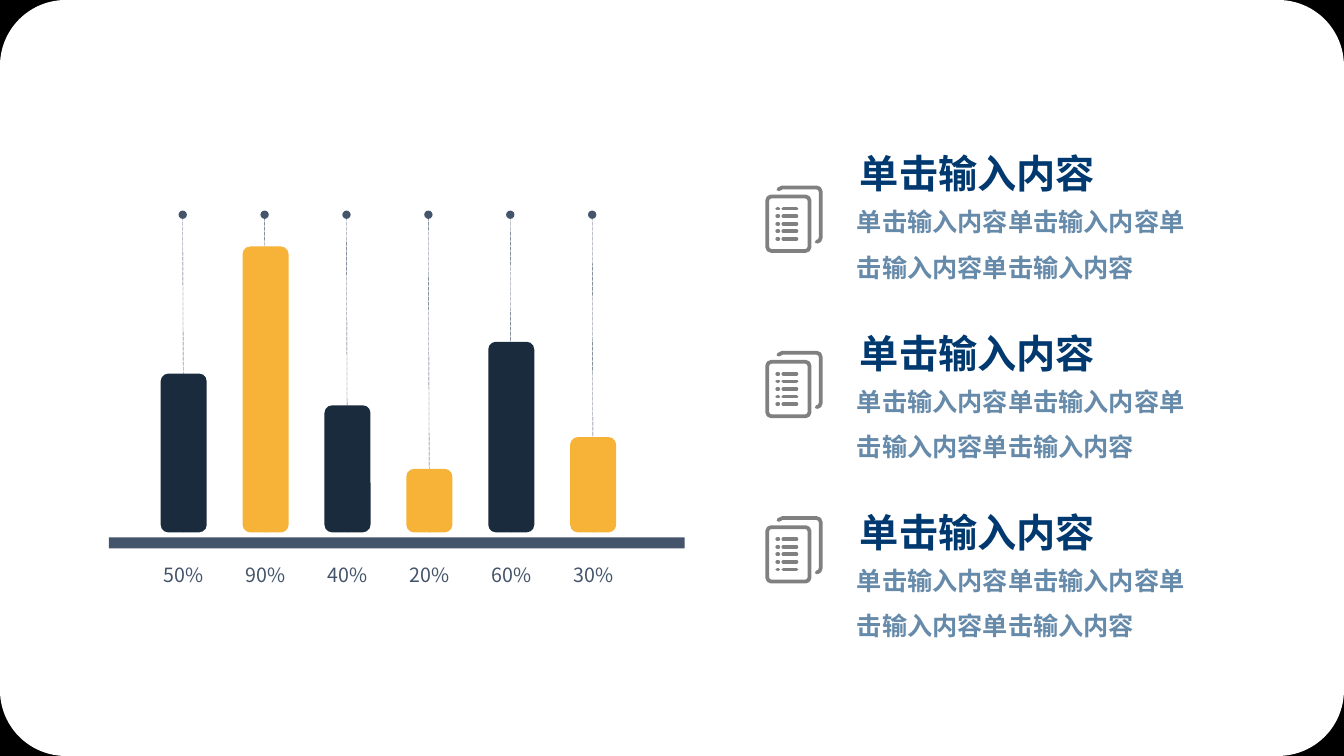
from math import cos, radians, sin

from lxml.etree import SubElement
from pptx import Presentation
from pptx.dml.color import RGBColor
from pptx.enum.dml import MSO_LINE_DASH_STYLE as DASH
from pptx.enum.shapes import MSO_CONNECTOR, MSO_SHAPE
from pptx.enum.text import MSO_AUTO_SIZE, PP_ALIGN
from pptx.oxml.ns import qn
from pptx.util import Inches, Pt

FONT = "Noto Sans CJK SC"
SLATE, NAVY, AMBER = "44546A", "192B3C", "F6B337"
HEAD, BODY, GREY = "00396F", "668AAA", "808080"
PERCENTS = [50, 90, 40, 20, 60, 30]
PHRASE = "单击输入内容"


def color(hex_text):
    return RGBColor.from_string(hex_text)


def add_box(s, kind, x, y, w, h, fill):
    sp = s.shapes.add_shape(kind, Inches(x), Inches(y), Inches(w), Inches(h))
    sp.shadow.inherit = False
    sp.fill.solid()
    sp.fill.fore_color.rgb = color(fill)
    sp.line.fill.background()
    return sp


def add_text(s, x, y, w, h, text, size, ink, spacing,
             bold=False, align=PP_ALIGN.LEFT, wrap=True):
    tf = s.shapes.add_textbox(Inches(x), Inches(y), Inches(w), Inches(h)).text_frame
    tf.word_wrap = wrap
    tf.auto_size = MSO_AUTO_SIZE.SHAPE_TO_FIT_TEXT
    p = tf.paragraphs[0]
    p.alignment, p.line_spacing = align, spacing
    r = p.add_run()
    r.text = text
    r.font.size, r.font.bold, r.font.name = Pt(size), bold, FONT
    r.font.color.rgb = color(ink)
    # East Asian characters take their font from a:ea
    SubElement(r.font._element, qn("a:ea"), typeface=FONT)


def add_stem(s, bar, x, top):
    """Dotted line from the foot of a bar up to a round dot, behind the bar."""
    stem = s.shapes.add_connector(MSO_CONNECTOR.STRAIGHT, 0, 0, Inches(x), Inches(top))
    stem.begin_connect(bar, 2)
    stem.line.color.rgb = color(SLATE)
    stem.line.width = Pt(0.25)
    stem.line.dash_style = DASH.ROUND_DOT
    SubElement(stem.line._get_or_add_ln(), qn("a:tailEnd"), type="oval")
    SubElement(stem._element.spPr, qn("a:effectLst"))
    bar._element.addprevious(stem._element)


def bar_chart(s, x, y, w, h):
    """Rounded bars on a base line, with a percentage under each."""
    full = 0.845 * h            # height of a 100% bar
    foot = y + full
    step, bar_w, label_w = w / 7.03, 0.08 * w, 0.61
    add_box(s, MSO_SHAPE.RECTANGLE, x, foot + 0.05, w, 0.11, SLATE)
    for i, percent in enumerate(PERCENTS):
        mid = x + 0.13 * w + i * step
        bar_h = full * percent / 100
        bar = add_box(s, MSO_SHAPE.ROUNDED_RECTANGLE, mid - bar_w / 2, foot - bar_h,
                      bar_w, bar_h, AMBER if i % 2 else NAVY)
        add_stem(s, bar, mid - 0.01, y)
        add_text(s, mid - label_w / 2, foot + 0.21, label_w, 0.37, f"{percent}%",
                 14, SLATE, 1.2, align=PP_ALIGN.CENTER, wrap=False)


def corner(cx, cy, start):
    """Three points on a quarter circle, clockwise from the start angle."""
    return [(cx + 0.04 * cos(radians(a)), cy + 0.04 * sin(radians(a)))
            for a in (start, start + 45, start + 90)]


def pages_icon(s, x, y):
    """Two sheets, the front one with a bulleted list, drawn as one outline."""
    front = (corner(0.06, 0.15, 180) + corner(0.4, 0.15, 270)
             + corner(0.4, 0.61, 0) + corner(0.06, 0.61, 90))
    back = ([(0.13, 0.04), (0.17, 0.02)] + corner(0.51, 0.06, 270)
            + corner(0.51, 0.52, 0))
    strokes = [(front, True), (back, False)]
    for i in range(5):
        mid = 0.23 + 0.3 * i / 4
        strokes += [([(0.12, mid), (0.13, mid)], False),
                    ([(0.18, mid), (0.31, mid)], False)]
    builder = s.shapes.build_freeform(Inches(x + front[0][0]), Inches(y + front[0][1]))
    for pts, closed in strokes:
        pts = [(Inches(x + px), Inches(y + py)) for px, py in pts]
        if not closed:
            builder.move_to(*pts[0])
        builder.add_line_segments(pts[1:], close=closed)
    sp = builder.convert_to_shape()
    sp.shadow.inherit = False
    sp.fill.background()
    sp.line.color.rgb = color(GREY)
    sp.line.width = Pt(2.7)
    ln = sp.line._get_or_add_ln()
    ln.set("cap", "rnd")
    SubElement(ln, qn("a:round"))


def text_item(s, x, y, w):
    """Heading with a two-line body below it."""
    add_text(s, x + 0.03, y, w - 0.22, 0.72, PHRASE, 28, HEAD, 1.5, bold=True)
    add_text(s, x, y + 0.65, w, 0.94, PHRASE * 4, 18, BODY, 1.5, bold=True)


def content_slide(prs):
    s = prs.slides.add_slide(prs.slide_layouts[6])
    s.background.fill.solid()
    s.background.fill.fore_color.rgb = color("000000")
    # White card with round corners
    card = add_box(s, MSO_SHAPE.ROUNDED_RECTANGLE, 0, 0, 13.33, 7.5, "FFFFFF")
    card.adjustments[0] = 0.087
    # Left: bars
    bar_chart(s, 1.08, 2.13, 5.71, 3.73)
    # Right: three items with icons
    for row in range(3):
        pages_icon(s, 7.59, 1.84 + 1.64 * row)
        text_item(s, 8.4, 1.2 + 1.78 * row, 3.53)


def main():
    prs = Presentation()
    prs.slide_width, prs.slide_height = Inches(13.33), Inches(7.5)
    content_slide(prs)
    prs.save("out.pptx")


if __name__ == "__main__":
    main()
